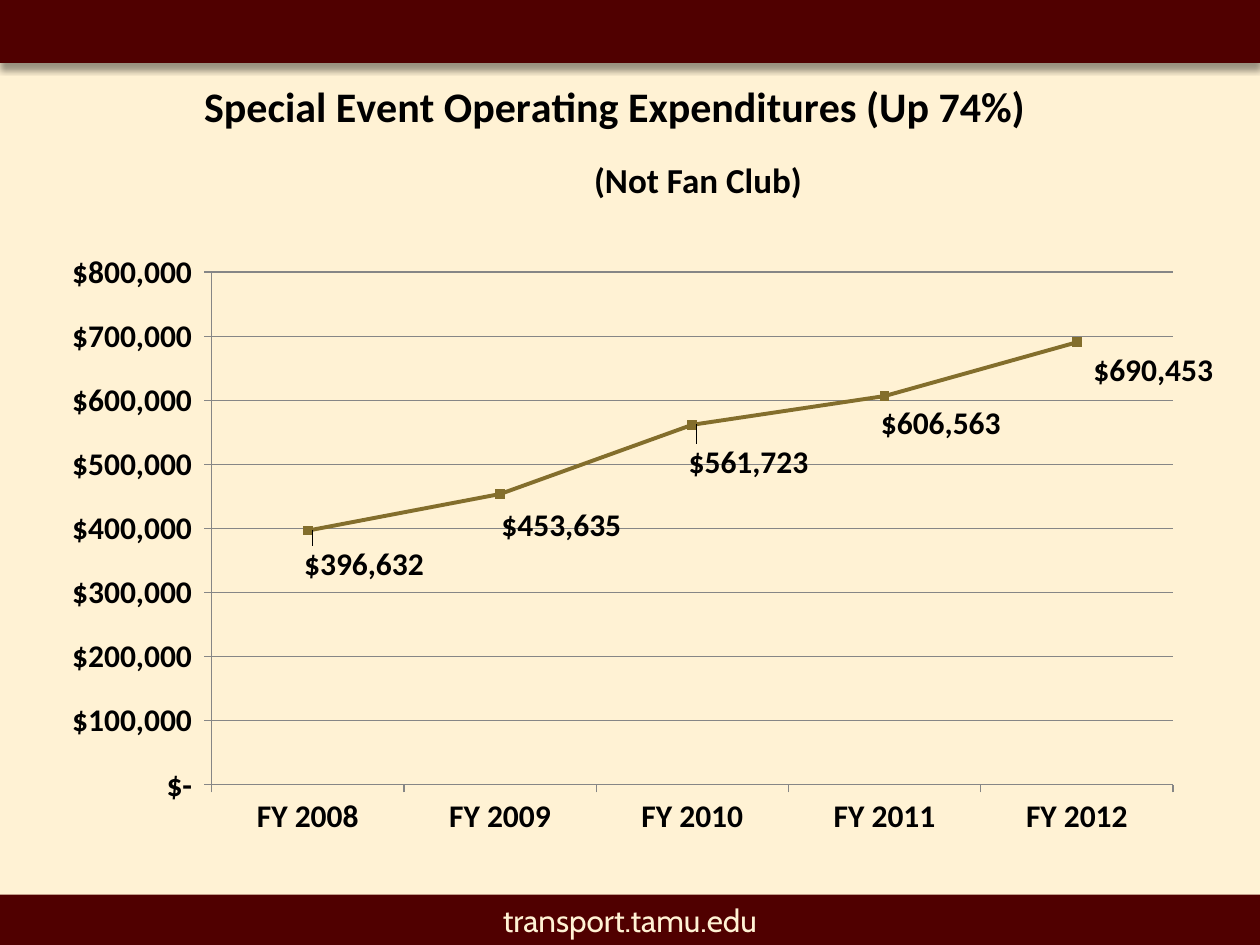
from lxml.etree import SubElement
from pptx import Presentation
from pptx.chart.data import CategoryChartData
from pptx.dml.color import RGBColor
from pptx.enum.chart import XL_CHART_TYPE, XL_LABEL_POSITION, XL_MARKER_STYLE, XL_TICK_MARK
from pptx.enum.shapes import MSO_SHAPE
from pptx.enum.text import MSO_ANCHOR, PP_ALIGN
from pptx.oxml import parse_xml
from pptx.oxml.ns import nsdecls, qn
from pptx.util import Inches, Pt

COLORS = {"maroon": "500000", "cream": "FFF2D4", "gold": "836E2C",
          "grid": "868686", "text": "000000"}
DOLLARS = '_("$"* #,##0_);_("$"* \\(#,##0\\);_("$"* "-"_);_(@_)'
EXPENDITURES = {"FY 2008": 396632, "FY 2009": 453635, "FY 2010": 561723,
                "FY 2011": 606563, "FY 2012": 690453}
# Shift of each value label from its usual place, in inches
LABEL_SHIFTS = [(-0.16, 0.27), (-0.12, 0.25), (-0.16, 0.3), (-0.16, 0.22), (0, 0.22)]
CHART_WIDTH, CHART_HEIGHT = 9.67, 6.58
NO_LEADER_LINES = (
    f'<c:extLst {nsdecls("c")}><c:ext uri="{{CE6537A1-D6FC-4f65-9D91-7224C49458BB}}" '
    'xmlns:c15="http://schemas.microsoft.com/office/drawing/2012/chart">'
    '<c15:showLeaderLines val="0"/></c:ext></c:extLst>')


def color(name):
    return RGBColor.from_string(COLORS[name])


def format_font(font, size=18, bold=True, name="Calibri", fill="text"):
    font.size, font.bold, font.name = Pt(size), bold, name
    font.color.rgb = color(fill)


def write_text(text_frame, text, align=PP_ALIGN.CENTER, **font_format):
    paragraph = text_frame.paragraphs[0]
    paragraph.alignment = align
    run = paragraph.add_run()
    run.text = text
    format_font(run.font, **font_format)


def set_layout(parent, index, x, y, size=None, edge=True):
    """Place a chart part; lengths in inches become fractions of the chart."""
    for old in parent.findall(qn("c:layout")):
        parent.remove(old)
    layout = parse_xml(f"<c:layout {nsdecls('c')}><c:manualLayout/></c:layout>")
    settings = {"layoutTarget": "inner"} if size else {}
    if edge:
        settings.update(xMode="edge", yMode="edge")
    settings.update(x=x / CHART_WIDTH, y=y / CHART_HEIGHT)
    if size:
        settings.update(w=size[0] / CHART_WIDTH, h=size[1] / CHART_HEIGHT)
    for tag, value in settings.items():
        SubElement(layout[0], qn(f"c:{tag}")).set("val", str(value))
    parent.insert(index, layout)


class SlideBuilder:
    def __init__(self, presentation):
        self.slide = presentation.slides.add_slide(presentation.slide_layouts[6])
        fill = self.slide.background.fill
        fill.solid()
        fill.fore_color.rgb = color("cream")

    def bar(self, top, height, text=None, shadow=False):
        shape = self.slide.shapes.add_shape(
            MSO_SHAPE.RECTANGLE, 0, Inches(top), Inches(10), Inches(height))
        shape.shadow.inherit = False
        shape.fill.solid()
        shape.fill.fore_color.rgb = color("maroon")
        shape.line.fill.background()
        if text:
            shape.text_frame.vertical_anchor = MSO_ANCHOR.MIDDLE
            write_text(shape.text_frame, text, bold=False, name="Cabin", fill="cream")
        if shadow:
            effects = shape._element.spPr.find(qn("a:effectLst"))
            effects.append(parse_xml(
                f'<a:outerShdw {nsdecls("a")} blurRad="{Pt(4)}" dist="{Pt(3)}" '
                'dir="5400000" rotWithShape="0"><a:srgbClr val="000000">'
                '<a:alpha val="40000"/></a:srgbClr></a:outerShdw>'))

    def text_box(self, left, top, width, height, text, **font_format):
        box = self.slide.shapes.add_textbox(
            Inches(left), Inches(top), Inches(width), Inches(height))
        box.text_frame.word_wrap = True
        box.text_frame.vertical_anchor = MSO_ANCHOR.MIDDLE
        write_text(box.text_frame, text, **font_format)

    def line_chart(self, left, top, title):
        data = CategoryChartData(number_format=DOLLARS)
        data.categories = list(EXPENDITURES)
        data.add_series("Series 1", list(EXPENDITURES.values()))
        chart = self.slide.shapes.add_chart(
            XL_CHART_TYPE.LINE_MARKERS, Inches(left), Inches(top),
            Inches(CHART_WIDTH), Inches(CHART_HEIGHT), data).chart
        format_font(chart.font, size=10, bold=False)
        chart.has_legend = False

        # Title and plot area
        chart.has_title = True
        write_text(chart.chart_title.text_frame, title, size=24)
        set_layout(chart.chart_title._element, 1, 1.39, 0.14)
        set_layout(chart._chartSpace.chart.plotArea, 0, 1.51, 1.74, size=(7.63, 4.07))

        # Axes
        for axis in (chart.category_axis, chart.value_axis):
            format_font(axis.tick_labels.font)
            axis.major_tick_mark = XL_TICK_MARK.OUTSIDE
            axis.minor_tick_mark = XL_TICK_MARK.NONE
            axis.format.line.color.rgb = color("grid")
            axis.format.line.width = Pt(0.75)
        value_axis = chart.value_axis
        value_axis.minimum_scale, value_axis.maximum_scale = 0, 800000
        value_axis.major_unit = 100000
        value_axis.tick_labels.number_format = DOLLARS
        value_axis.tick_labels.number_format_is_linked = False
        value_axis.has_major_gridlines = True
        gridline = value_axis.major_gridlines.format.line
        gridline.color.rgb = color("grid")
        gridline.width = Pt(0.75)

        # Line and markers
        chart.plots[0].vary_by_categories = False
        series = chart.plots[0].series[0]
        series.smooth = False
        series.format.line.color.rgb = color("gold")
        series.format.line.width = Pt(2.25)
        series.marker.style = XL_MARKER_STYLE.SQUARE
        series.marker.size = 5
        series.marker.format.fill.solid()
        series.marker.format.fill.fore_color.rgb = color("gold")
        series.marker.format.line.color.rgb = color("gold")

        # Value labels
        labels = series.data_labels
        labels.show_value = True
        labels.number_format = DOLLARS
        labels.number_format_is_linked = False
        format_font(labels.font)
        for index, (shift_x, shift_y) in enumerate(LABEL_SHIFTS):
            label = series.points[index].data_label
            format_font(label.font)
            label.position = XL_LABEL_POSITION.RIGHT
            set_layout(labels._element.findall(qn("c:dLbl"))[index], 1,
                       shift_x, shift_y, edge=False)
        labels._element.append(parse_xml(NO_LEADER_LINES))


def main():
    presentation = Presentation()
    presentation.slide_width, presentation.slide_height = Inches(10), Inches(7.5)
    builder = SlideBuilder(presentation)
    # Header and footer bands
    builder.bar(0, 0.5, shadow=True)
    builder.bar(7.1, 0.4, text="transport.tamu.edu")
    # Expenditure chart with its subtitle
    builder.line_chart(0.17, 0.42, "Special Event Operating Expenditures (Up 74%)")
    builder.text_box(4.54, 1.19, 2, 0.47, "(Not Fan Club)", size=20)
    presentation.save("out.pptx")


if __name__ == "__main__":
    main()
